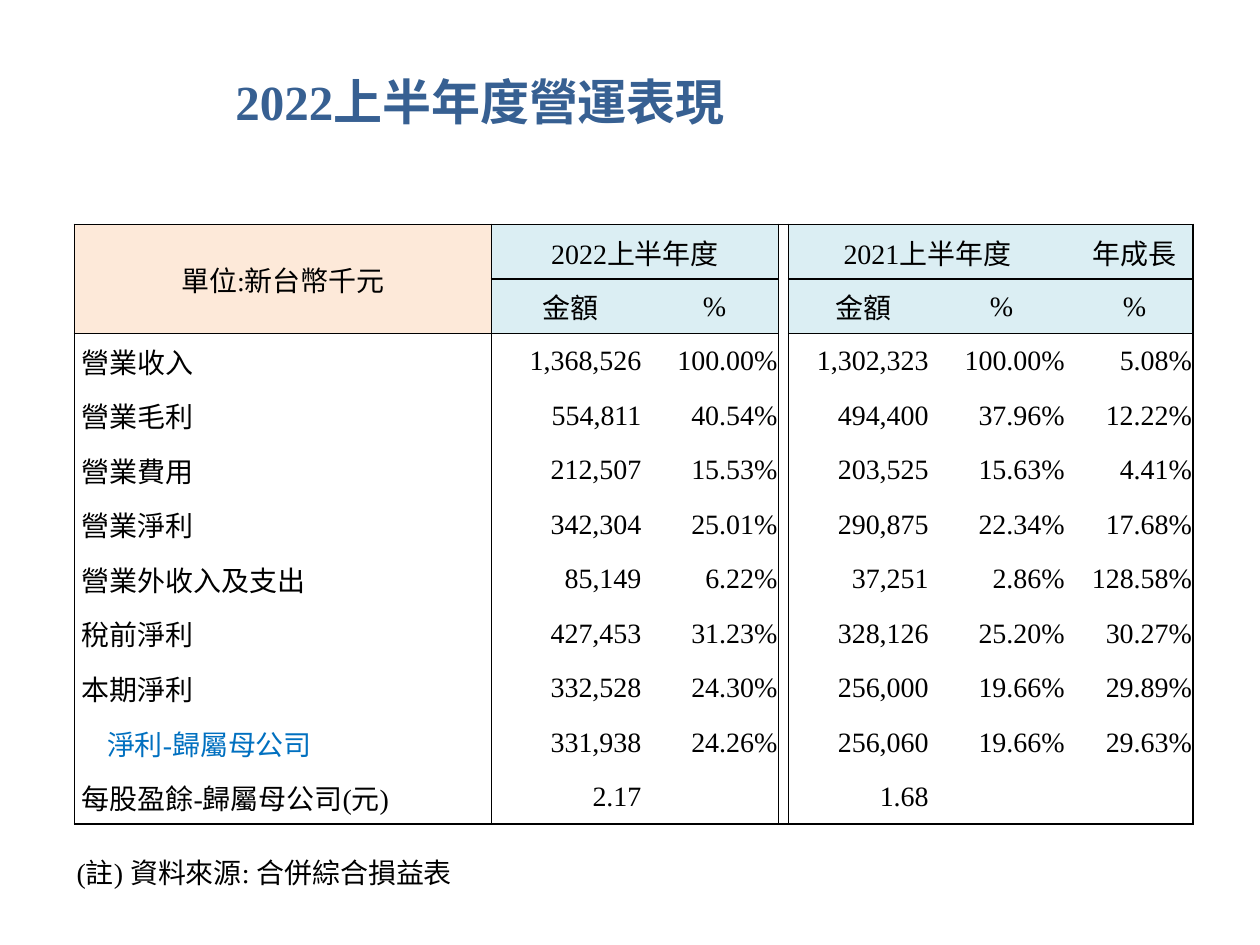
from lxml import etree
from pptx import Presentation
from pptx import util as u
from pptx.dml.color import RGBColor
from pptx.enum import text
from pptx.oxml import ns

BLACK = RGBColor(0x00, 0x00, 0x00)
TITLE_BLUE = RGBColor(0x37, 0x60, 0x92)
DETAIL_BLUE = RGBColor(0x00, 0x70, 0xC0)
PEACH = RGBColor(0xFD, 0xE9, 0xD9)
PALE_BLUE = RGBColor(0xDB, 0xEE, 0xF3)

LEFT, CENTER, RIGHT = text.PP_ALIGN.LEFT, text.PP_ALIGN.CENTER, text.PP_ALIGN.RIGHT

# Columns: label, 2022 amount and %, divider, 2021 amount and %, gap, growth
COLUMN_WIDTHS = [3.31, 1.26, 1.02, 0.08, 1.18, 1.02, 0.08, 0.93]
DIVIDER = 3
AMOUNT_COLUMNS = {1, 4}
VALUE_COLUMNS = [1, 2, 4, 5, 7]
GROUP_STARTS, GROUP_ENDS = {0, 1, 3, 4}, {0, 2, 3, 7}

HEADER_ROWS = 2
HEADERS = [
    (0, 0, "單位:新台幣千元"), (0, 1, "2022上半年度"), (0, 4, "2021上半年度"),
    (0, 7, "年成長"), (1, 1, "金額"), (1, 2, "%"), (1, 4, "金額"),
    (1, 5, "%"), (1, 7, "%"),
]
MERGES = [(0, 0, 1, 0), (0, 1, 0, 2), (0, 4, 0, 5)]
DETAIL_LABEL = "淨利-歸屬母公司"
RESULTS = [
    ("營業收入", "1,368,526", "100.00%", "1,302,323", "100.00%", "5.08%"),
    ("營業毛利", "554,811", "40.54%", "494,400", "37.96%", "12.22%"),
    ("營業費用", "212,507", "15.53%", "203,525", "15.63%", "4.41%"),
    ("營業淨利", "342,304", "25.01%", "290,875", "22.34%", "17.68%"),
    ("營業外收入及支出", "85,149", "6.22%", "37,251", "2.86%", "128.58%"),
    ("稅前淨利", "427,453", "31.23%", "328,126", "25.20%", "30.27%"),
    ("本期淨利", "332,528", "24.30%", "256,000", "19.66%", "29.89%"),
    (DETAIL_LABEL, "331,938", "24.26%", "256,060", "19.66%", "29.63%"),
    ("每股盈餘-歸屬母公司(元)", "2.17", "", "1.68", "", ""),
]
ROW_COUNT = HEADER_ROWS + len(RESULTS)


def write(frame, words, size=16, color=BLACK, bold=False, align=LEFT):
    paragraph = frame.paragraphs[0]
    paragraph.alignment = align
    if words:
        paragraph.add_run().text = words
    for font in [paragraph.font] + [run.font for run in paragraph.runs]:
        font.name = "Times New Roman"
        font.size = u.Pt(size)
        font.bold = bold
        font.color.rgb = color


def cell_edges(cell, row, column):
    """Tell which sides of a cell carry a line: left, right, top, bottom."""
    last_row = row + cell.span_height - 1
    last_column = column + cell.span_width - 1
    ruled_tops, ruled_bottoms = {0}, {ROW_COUNT - 1}
    if column != DIVIDER:
        ruled_tops.add(HEADER_ROWS)
        ruled_bottoms.add(HEADER_ROWS - 1)
        if column > 0:
            ruled_tops.add(1)
            ruled_bottoms.add(0)
    return {
        "L": column in GROUP_STARTS,
        "R": last_column in GROUP_ENDS,
        "T": row in ruled_tops,
        "B": last_row in ruled_bottoms,
    }


def draw_borders(cell, edges):
    properties = cell._tc.get_or_add_tcPr()
    for index, (side, ruled) in enumerate(edges.items()):
        line = etree.Element(ns.qn(f"a:ln{side}"), w=str(u.Pt(1)))
        if ruled:
            fill = etree.SubElement(line, ns.qn("a:solidFill"))
            etree.SubElement(fill, ns.qn("a:srgbClr"), val=str(BLACK))
        else:
            etree.SubElement(line, ns.qn("a:noFill"))
        properties.insert(index, line)


class ReportSlide:
    def __init__(self, presentation):
        self.slide = presentation.slides.add_slide(presentation.slide_layouts[6])

    def text_box(self, left, top, width, height, words, **style):
        box = self.slide.shapes.add_textbox(*map(u.Inches, (left, top, width, height)))
        box.text_frame.word_wrap = True
        box.text_frame.auto_size = text.MSO_AUTO_SIZE.SHAPE_TO_FIT_TEXT
        write(box.text_frame, words, **style)

    def fill_cell(self, cell, words, fill=None, indent=0.01, gap=0.01, **style):
        cell.vertical_anchor = text.MSO_ANCHOR.MIDDLE
        cell.margin_left, cell.margin_right = u.Inches(indent), u.Inches(gap)
        cell.margin_top, cell.margin_bottom = u.Inches(0.01), 0
        if fill is None:
            cell.fill.background()
        else:
            cell.fill.solid()
            cell.fill.fore_color.rgb = fill
        write(cell.text_frame, words, **style)

    def results_table(self, left, top, width, height):
        frame = self.slide.shapes.add_table(
            ROW_COUNT, len(COLUMN_WIDTHS), *map(u.Inches, (left, top, width, height)))
        table = frame.table
        table.first_row = table.horz_banding = False
        for column, column_width in zip(table.columns, COLUMN_WIDTHS):
            column.width = u.Inches(column_width)
        for row in table.rows:
            row.height = u.Inches(height / ROW_COUNT)
        for top_row, first, bottom_row, last in MERGES:
            table.cell(top_row, first).merge(table.cell(bottom_row, last))

        # Words by position
        words = {(row, column): label for row, column, label in HEADERS}
        for row, (label, *values) in enumerate(RESULTS, HEADER_ROWS):
            words[row, 0] = label
            words.update({(row, column): value
                          for column, value in zip(VALUE_COLUMNS, values)})

        # Cells
        for row in range(ROW_COUNT):
            for column in range(len(COLUMN_WIDTHS)):
                cell = table.cell(row, column)
                label = words.get((row, column), "")
                if column == DIVIDER:
                    style = {}
                elif row < HEADER_ROWS:
                    style = dict(fill=PALE_BLUE if column else PEACH, align=CENTER)
                elif column == 0:
                    detail = label == DETAIL_LABEL
                    style = dict(indent=0.26 if detail else 0.06,
                                 color=DETAIL_BLUE if detail else BLACK)
                else:
                    style = dict(gap=0.07 if column in AMOUNT_COLUMNS else 0.01,
                                 align=RIGHT)
                self.fill_cell(cell, label, **style)
                draw_borders(cell, cell_edges(cell, row, column))


def main():
    presentation = Presentation()
    presentation.slide_width, presentation.slide_height = u.Inches(10), u.Inches(7.5)
    report = ReportSlide(presentation)

    # Title
    report.text_box(1.77, 0.52, 4.25, 0.57, "2022上半年度營運表現",
                    size=28, color=TITLE_BLUE, bold=True)
    # Results
    report.results_table(0.59, 1.78, 8.88, 4.76)
    # Source note
    report.text_box(0.51, 6.74, 3.22, 0.37, "(註) 資料來源: 合併綜合損益表")

    presentation.save("out.pptx")


if __name__ == "__main__":
    main()
